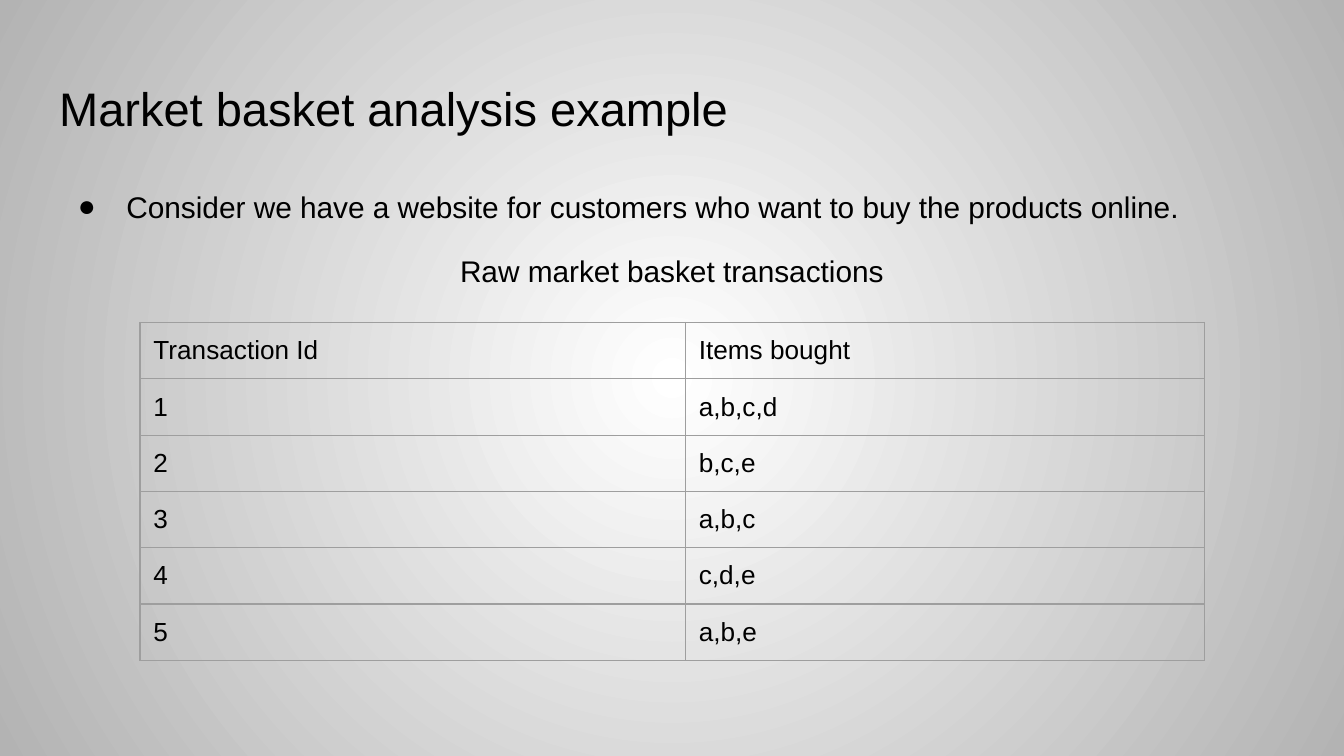
from dataclasses import dataclass

import pptx
import pptx.dml.color
import pptx.enum.text
import pptx.oxml
import pptx.oxml.ns
import pptx.util
from pptx.util import Pt

COLORS = {"text": "000000", "border": "9E9E9E", "center": "FFFFFF", "edge": "B3B3B3"}
FONT = "Arial"
INSET = 7.2
ROW_HEIGHT = 30.1
COLUMN_WIDTHS = (292.2, 278)


@dataclass
class Box:
    left: float
    top: float
    width: float
    height: float


@dataclass
class Transaction:
    number: str
    items: str


TITLE_BOX = Box(24.5, 35, 671, 45)
BODY_BOX = Box(24.5, 91, 671, 269)
HEADER = Transaction("Transaction Id", "Items bought")
TRANSACTIONS = [
    Transaction("1", "a,b,c,d"),
    Transaction("2", "b,c,e"),
    Transaction("3", "a,b,c"),
    Transaction("4", "c,d,e"),
    Transaction("5", "a,b,e"),
]


def color(name: str) -> pptx.dml.color.RGBColor:
    return pptx.dml.color.RGBColor.from_string(COLORS[name])


def add_xml(parent, markup: str) -> None:
    """Append an element written with the a: prefix."""
    name, rest = markup[3:].split(" ", 1)
    namespace = pptx.oxml.ns.nsdecls("a")
    parent.append(pptx.oxml.parse_xml(f"<a:{name} {namespace} {rest}"))


def format_runs(para, size: float) -> None:
    for span in para.runs:
        span.font.name = FONT
        span.font.size = Pt(size)
        span.font.color.rgb = color("text")


def paint_background(page) -> None:
    fill = page.background.fill
    fill.gradient()
    for stop, name, position in zip(fill.gradient_stops, ("center", "edge"), (0, 1)):
        stop.color.rgb = color(name)
        stop.position = position
    gradient = page.element.xpath(".//p:bg//a:gradFill")[0]
    for linear in gradient.xpath("./a:lin"):
        gradient.remove(linear)
    add_xml(gradient, '<a:path path="circle"><a:fillToRect l="50000" t="50000" '
                      'r="50000" b="50000"/></a:path>')


def place(holder, box: Box):
    """Position a placeholder and return its text frame."""
    holder.left, holder.top = Pt(box.left), Pt(box.top)
    holder.width, holder.height = Pt(box.width), Pt(box.height)
    frame = holder.text_frame
    frame.auto_size = pptx.enum.text.MSO_AUTO_SIZE.NONE
    frame.word_wrap = True
    frame.margin_left = frame.margin_right = Pt(INSET)
    frame.margin_top = frame.margin_bottom = Pt(INSET)
    return frame


def add_title(page) -> None:
    frame = place(page.shapes.title, TITLE_BOX)
    frame.text = "Market basket analysis example"
    frame.vertical_anchor = pptx.enum.text.MSO_ANCHOR.MIDDLE
    para = frame.paragraphs[0]
    para.alignment = pptx.enum.text.PP_ALIGN.LEFT
    format_runs(para, 25.2)


def add_body(page) -> None:
    frame = place(page.placeholders[1], BODY_BOX)
    frame.vertical_anchor = pptx.enum.text.MSO_ANCHOR.TOP
    frame.text = (
        "Consider we have a website for customers who want to buy the products online.\n"
        "Raw market basket transactions"
    )
    bullet, caption = frame.paragraphs
    for para, before in ((bullet, 0), (caption, 12)):
        para.line_spacing = 1.15
        para.space_before = Pt(before)
        format_runs(para, 16)
    caption.alignment = pptx.enum.text.PP_ALIGN.CENTER

    properties = bullet._p.get_or_add_pPr()
    properties.set("marL", str(Pt(36)))
    properties.set("indent", str(Pt(-26)))
    add_xml(properties, f'<a:buClr ><a:srgbClr val="{COLORS["text"]}"/></a:buClr>')
    add_xml(properties, f'<a:buFont typeface="{FONT}"/>')
    add_xml(properties, '<a:buChar char="●"/>')

    properties = caption._p.get_or_add_pPr()
    properties.set("marL", "0")
    properties.set("indent", "0")
    add_xml(properties, "<a:buNone />")


def fill_cell(cell, text: str) -> None:
    cell.text = text
    cell.margin_left = cell.margin_right = Pt(INSET)
    cell.margin_top = cell.margin_bottom = Pt(INSET)
    format_runs(cell.text_frame.paragraphs[0], 14)
    properties = cell._tc.get_or_add_tcPr()
    for side in "LRTB":
        add_xml(properties, f'<a:ln{side} w="{Pt(0.75)}"><a:solidFill><a:srgbClr '
                            f'val="{COLORS["border"]}"/></a:solidFill></a:ln{side}>')
    cell.fill.background()


def add_transactions(page) -> None:
    rows = [HEADER, *TRANSACTIONS]
    table = page.shapes.add_table(
        len(rows), len(COLUMN_WIDTHS), Pt(75), Pt(172.8),
        Pt(sum(COLUMN_WIDTHS)), Pt(ROW_HEIGHT * len(rows)),
    ).table
    table.first_row = table.horz_banding = False
    for column, width in zip(table.columns, COLUMN_WIDTHS):
        column.width = Pt(width)
    for row, entry in zip(table.rows, rows):
        row.height = Pt(ROW_HEIGHT)
        for cell, text in zip(row.cells, (entry.number, entry.items)):
            fill_cell(cell, text)


def main() -> None:
    deck = pptx.Presentation()
    deck.slide_width, deck.slide_height = Pt(720), Pt(405)
    page = deck.slides.add_slide(deck.slide_layouts[1])
    paint_background(page)
    add_title(page)
    add_body(page)
    add_transactions(page)
    deck.save("out.pptx")


if __name__ == "__main__":
    main()
